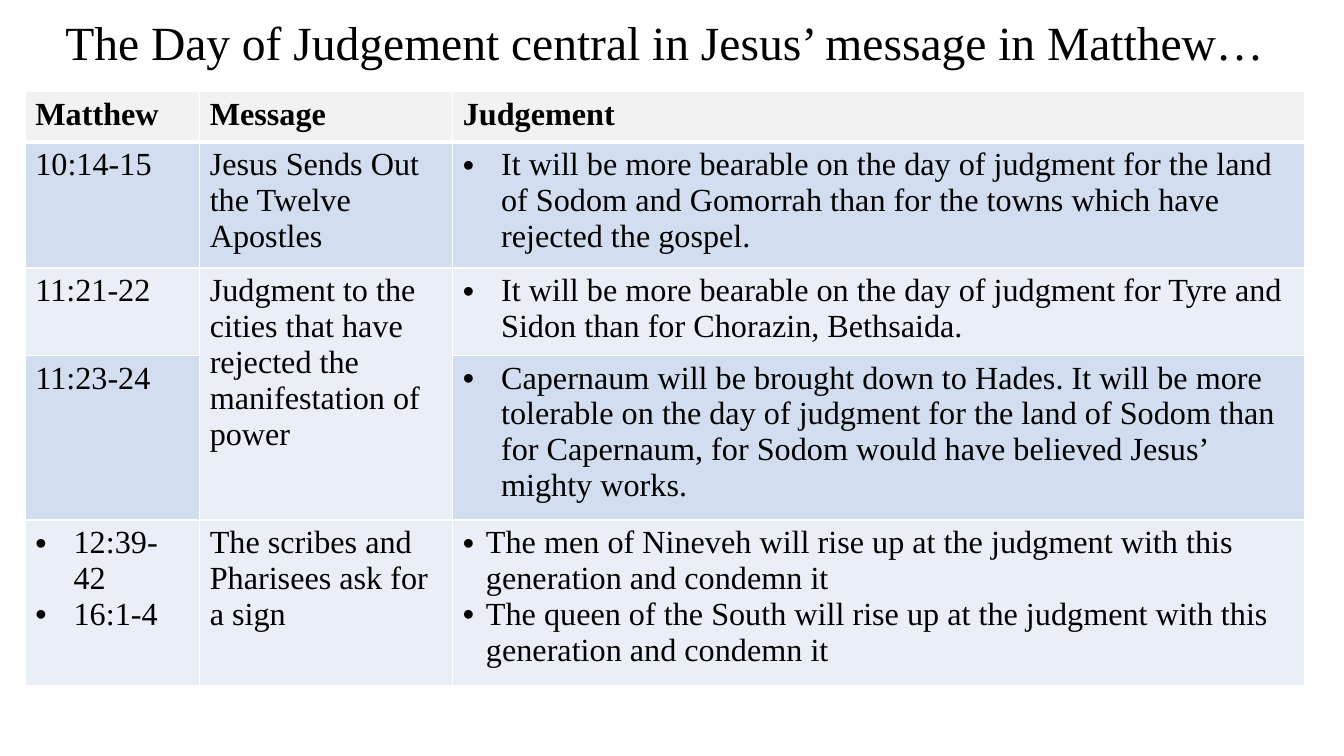
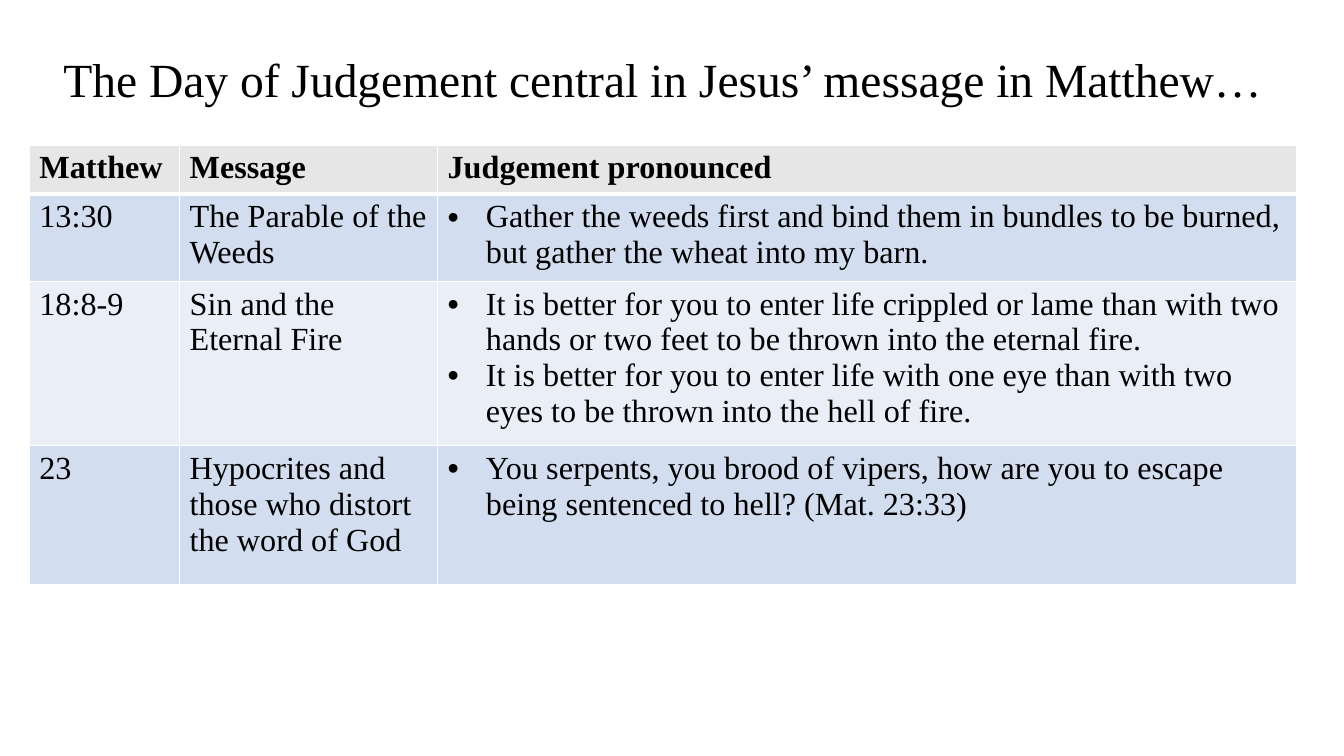
from lxml import etree
from pptx import Presentation
from pptx import util as u
from pptx.dml.color import RGBColor
from pptx.enum import text
from pptx.oxml import ns

FONT = "Times New Roman"
TITLE = "The Day of Judgement central in Jesus’ message in Matthew…"
BLACK = RGBColor(0x00, 0x00, 0x00)
WHITE = RGBColor(0xFF, 0xFF, 0xFF)
LIGHT_GREY = RGBColor(0xF2, 0xF2, 0xF2)
WARM_GREY = RGBColor(0xE7, 0xE6, 0xE6)
BANDS = [RGBColor(0xEA, 0xEF, 0xF7), RGBColor(0xD2, 0xDE, 0xEF)]
WIDE, NARROW = 0.38, 0.23

presentation = Presentation()
presentation.slide_width = u.Inches(13.333)
presentation.slide_height = u.Inches(7.5)
COLUMN = presentation.slide_width / 100
ROW = presentation.slide_height / 100


def style_runs(paragraph, size, bold=False):
    for run in paragraph.runs:
        run.font.name = FONT
        run.font.size = u.Pt(size)
        run.font.bold = bold
        run.font.color.rgb = BLACK


def add_borders(cell, top, bottom):
    properties = cell._tc.get_or_add_tcPr()
    widths = {"lnL": 1, "lnR": 1, "lnT": top, "lnB": bottom}
    for position, (side, width) in enumerate(widths.items()):
        line = etree.Element(ns.qn(f"a:{side}"), w=str(u.Pt(width)))
        fill = etree.SubElement(line, ns.qn("a:solidFill"))
        etree.SubElement(fill, ns.qn("a:srgbClr"), val=str(WHITE))
        properties.insert(position, line)


pages = [
    {
        "left": 1.88, "title": (1.07, 9.73), "top": 12.13, "header": LIGHT_GREY,
        "columns": [12.98, 18.83, 63.39],
        "rows": [6.67, 16, 11.07, 16, 21.87],
        "merge": (2, 3, 1),
        "cells": [
            ["Matthew", "Message", "Judgement"],
            ["10:14-15", "Jesus Sends Out the Twelve Apostles",
             (WIDE, "It will be more bearable on the day of judgment for the land of Sodom "
                    "and Gomorrah than for the towns which have rejected the gospel.")],
            ["11:21-22", "Judgment to the cities that have rejected the manifestation of power",
             (WIDE, "It will be more bearable on the day of judgment for Tyre and Sidon "
                    "than for Chorazin, Bethsaida.")],
            ["11:23-24", "",
             (WIDE, "Capernaum will be brought down to Hades. It will be more tolerable on the "
                    "day of judgment for the land of Sodom than for Capernaum, for Sodom would "
                    "have believed Jesus’ mighty works.")],
            [(WIDE, "12:39-42", "16:1-4"), "The scribes and Pharisees ask for a sign",
             (NARROW,
              "The men of Nineveh will rise up at the judgment with this generation and condemn it",
              "The queen of the South will rise up at the judgment with this generation "
              "and condemn it")],
        ],
    },
    {
        "left": 2.18, "title": (4.93, 11.73), "top": 19.2, "header": WARM_GREY,
        "columns": [11.18, 19.2, 63.92],
        "rows": [6.27, 11.07, 20.93, 18.4],
        "merge": None,
        "cells": [
            ["Matthew", "Message", "Judgement pronounced"],
            ["13:30", "The Parable of the Weeds",
             (WIDE, "Gather the weeds first and bind them in bundles to be burned, "
                    "but gather the wheat into my barn.")],
            ["18:8-9", "Sin and the Eternal Fire",
             (WIDE,
              "It is better for you to enter life crippled or lame than with two hands "
              "or two feet to be thrown into the eternal fire.",
              "It is better for you to enter life with one eye than with two eyes "
              "to be thrown into the hell of fire.")],
            ["23", "Hypocrites and those who distort the word of God",
             (WIDE, "You serpents, you brood of vipers, how are you to escape being "
                    "sentenced to hell? (Mat. 23:33)")],
        ],
    },
]

for page in pages:
    slide = presentation.slides.add_slide(presentation.slide_layouts[6])
    left = int(page["left"] * COLUMN)
    width = int(sum(page["columns"]) * COLUMN)
    title_top, title_height = page["title"]

    title = slide.shapes.add_textbox(left, int(title_top * ROW), width, int(title_height * ROW))
    title.line.color.rgb = WHITE
    title.line.width = u.Pt(0.75)
    title.text_frame.word_wrap = True
    title.text_frame.vertical_anchor = text.MSO_ANCHOR.MIDDLE
    title.text_frame.text = TITLE
    heading = title.text_frame.paragraphs[0]
    heading.alignment = text.PP_ALIGN.CENTER
    heading.line_spacing = 0.9
    style_runs(heading, 34)

    table = slide.shapes.add_table(
        len(page["rows"]), len(page["columns"]), left, int(page["top"] * ROW),
        width, int(sum(page["rows"]) * ROW)).table
    for column, share in zip(table.columns, page["columns"]):
        column.width = int(share * COLUMN)
    for row, share in zip(table.rows, page["rows"]):
        row.height = int(share * ROW)

    for row_index, contents in enumerate(page["cells"]):
        is_header = row_index == 0
        for column_index, content in enumerate(contents):
            cell = table.cell(row_index, column_index)
            cell.fill.solid()
            cell.fill.fore_color.rgb = page["header"] if is_header else BANDS[row_index % 2]
            add_borders(cell, 3 if row_index == 1 else 1, 3 if is_header else 1)
            indent, *lines = (0, content) if isinstance(content, str) else content
            cell.text_frame.text = "\n".join(lines)
            for paragraph in cell.text_frame.paragraphs:
                style_runs(paragraph, 23, is_header)
                if indent:
                    properties = paragraph._p.get_or_add_pPr()
                    properties.set("marL", str(u.Inches(indent)))
                    properties.set("indent", str(-u.Inches(indent)))
                    etree.SubElement(properties, ns.qn("a:buFont"), typeface="Arial")
                    etree.SubElement(properties, ns.qn("a:buChar"), char="•")

    if page["merge"]:
        first_row, last_row, column_index = page["merge"]
        table.cell(first_row, column_index).merge(table.cell(last_row, column_index))

presentation.save("out.pptx")
